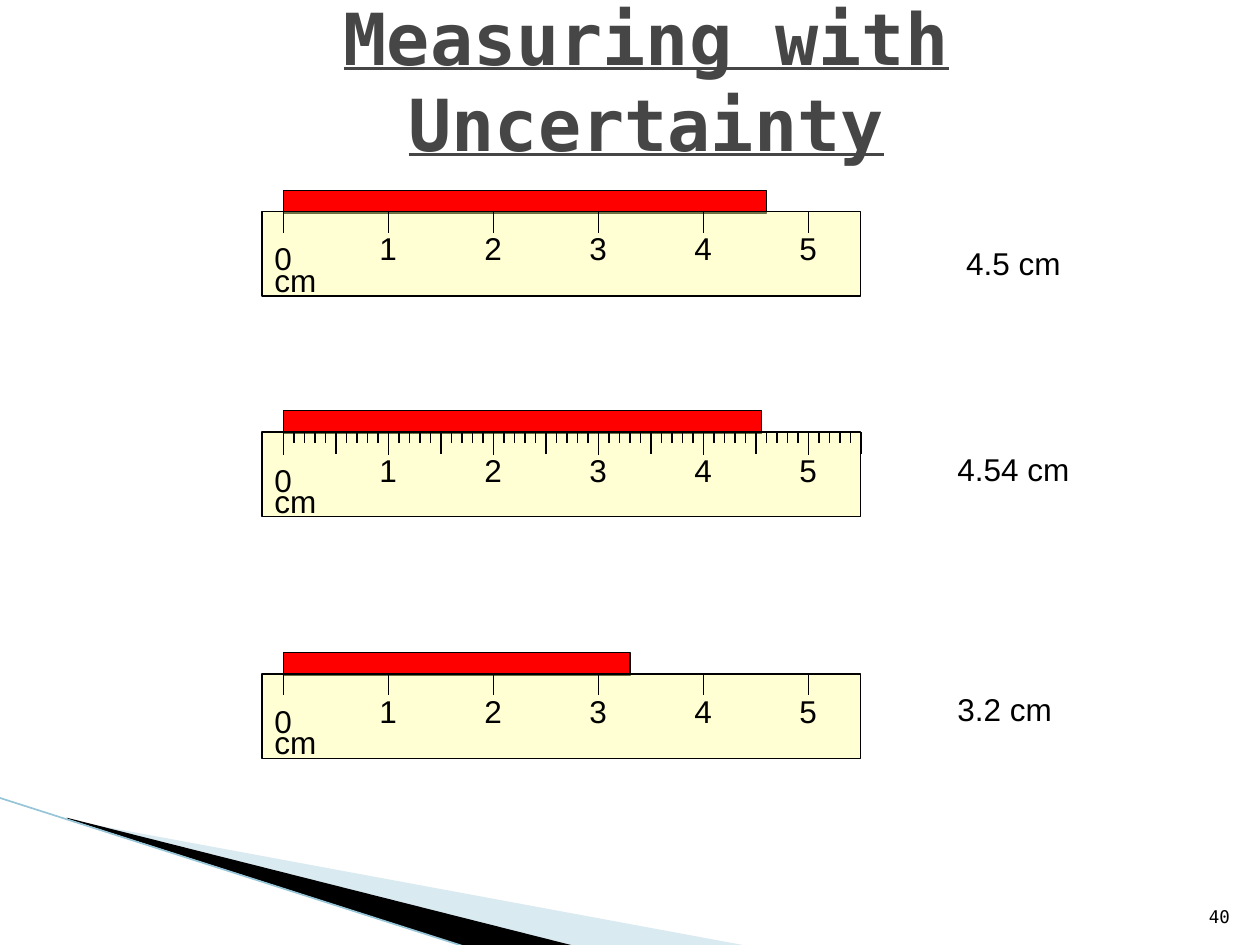
from pptx import Presentation
from pptx import util as u
from pptx.dml.color import RGBColor
from pptx.enum import shapes, text
from pptx.oxml.ns import qn
from lxml import etree

UNIT = 2.5 / 3
RULER_WIDTH = 4.75
RULER_HEIGHT = 0.67
ZERO_INSET = 0.17
MAJOR_TICK = 0.17
MINOR_TICK = 0.09


def paint(color_format, color):
    color_format.rgb = RGBColor.from_string(color)


def fill_solid(shape, color, opacity=None):
    shape.shadow.inherit = False
    shape.fill.solid()
    paint(shape.fill.fore_color, color)
    if opacity is not None:
        solid = shape.fill._xPr.find(qn("a:solidFill"))
        etree.SubElement(solid[0], qn("a:alpha"), val=str(opacity * 1000))


def add_line(parent, start, end, color="000000", width=0.75):
    line = parent.add_connector(
        shapes.MSO_CONNECTOR.STRAIGHT, *(u.Inches(v) for v in (*start, *end)))
    paint(line.line.color, color)
    line.line.width = u.Pt(width)
    etree.SubElement(line._element.spPr, qn("a:effectLst"))


def add_bar(parent, box, color, opacity=None):
    bar = parent.add_shape(
        shapes.MSO_SHAPE.RECTANGLE, *(u.Inches(v) for v in box))
    fill_solid(bar, color, opacity)
    paint(bar.line.color, "000000")
    bar.line.width = u.Pt(0.75)


def style(paragraph, size, font):
    paragraph.font.size = u.Pt(size)
    paragraph.font.name = font
    paint(paragraph.font.color, "000000")


def add_label(parent, wording, left, top, width):
    label = parent.add_textbox(*(u.Inches(v) for v in (left, top, width, 0.4)))
    frame = label.text_frame
    frame.word_wrap = False
    frame.auto_size = text.MSO_AUTO_SIZE.SHAPE_TO_FIT_TEXT
    frame.text = wording
    style(frame.paragraphs[0], 18, "Arial")


def add_wedge(parent, points, color, opacity=None):
    corners = [(u.Inches(x), u.Inches(y)) for x, y in points]
    builder = parent.build_freeform(*corners[0])
    builder.add_line_segments(corners[1:], close=True)
    wedge = builder.convert_to_shape()
    fill_solid(wedge, color, opacity)
    wedge.line.fill.background()


def add_corner(parent):
    add_wedge(parent, [(0.55, 6.51), (5.95, 7.51), (4.56, 7.51), (0.55, 6.5)],
              "A0CBDC", 40)
    add_wedge(parent, [(0.53, 6.49), (4.57, 7.51), (3.72, 7.52), (0.54, 6.5)],
              "000000")
    add_line(parent, (-0.01, 6.33), (3.71, 7.52), "97C5D8", 0.95)


def add_title(slide):
    title = slide.shapes.title
    title.left, title.top, title.width, title.height = (
        u.Inches(v) for v in (1.09, 0.17, 8.08, 0.92))
    frame = title.text_frame
    frame.text = "Measuring with Uncertainty"
    frame.word_wrap = True
    frame.auto_size = text.MSO_AUTO_SIZE.NONE
    frame.vertical_anchor = text.MSO_ANCHOR.MIDDLE
    heading = frame.paragraphs[0]
    heading.alignment = text.PP_ALIGN.CENTER
    style(heading, 41, "DejaVu Sans Mono")
    heading.font.bold = heading.font.underline = True
    paint(heading.font.color, "464646")


def add_ruler(parent, left, top, scale_top, millimetres):
    ruler = parent.add_group_shape().shapes
    zero = left + ZERO_INSET
    add_bar(ruler, (left, top, RULER_WIDTH, RULER_HEIGHT), "FFFF99", 43)
    for number in range(6):
        x = zero + number * UNIT
        add_line(ruler, (x, scale_top), (x, scale_top + MAJOR_TICK))
        drop = 0.09 if number else 0.17
        add_label(ruler, str(number), x - 0.17, scale_top + drop, 0.34)
    add_label(ruler, "cm", left, scale_top + 0.34, 0.53)
    if millimetres:
        for tick in range(56):
            x = zero + tick * UNIT / 10
            length = MINOR_TICK if tick % 5 else MAJOR_TICK
            if tick % 10 or tick == 0:
                add_line(ruler, (x, top), (x, top + length))


def add_measurement(parent, left, top, length, answer, answer_box,
                    scale_shift=0, millimetres=False):
    add_bar(parent, (left + ZERO_INSET, top - 0.17, length * UNIT, 0.18),
            "FF0000")
    add_ruler(parent, left, top, top + scale_shift, millimetres)
    add_label(parent, answer, *answer_box)


def add_page_number(parent):
    number = parent.add_textbox(
        *(u.Inches(v) for v in (9.46, 7.01, 0.4, 0.4)))
    frame = number.text_frame
    frame.word_wrap = True
    frame.vertical_anchor = text.MSO_ANCHOR.BOTTOM
    frame.text = "40"
    frame.paragraphs[0].alignment = text.PP_ALIGN.RIGHT
    style(frame.paragraphs[0], 10, "DejaVu Sans Mono")


def main():
    deck = Presentation()
    deck.slide_width, deck.slide_height = u.Inches(10), u.Inches(7.5)
    slide = deck.slides.add_slide(deck.slide_layouts[5])
    add_corner(slide.shapes)
    add_title(slide)
    add_measurement(slide.shapes, 2.08, 1.68, 4.6, "4.5 cm", (7.57, 1.89, 0.95))
    add_measurement(slide.shapes, 2.08, 3.43, 4.55, "4.54 cm",
                    (7.5, 3.52, 1.09), scale_shift=0.01, millimetres=True)
    add_measurement(slide.shapes, 2.08, 5.35, 3.3, "3.2 cm", (7.5, 5.43, 0.95))
    add_page_number(slide.shapes)
    deck.save("out.pptx")


if __name__ == "__main__":
    main()
